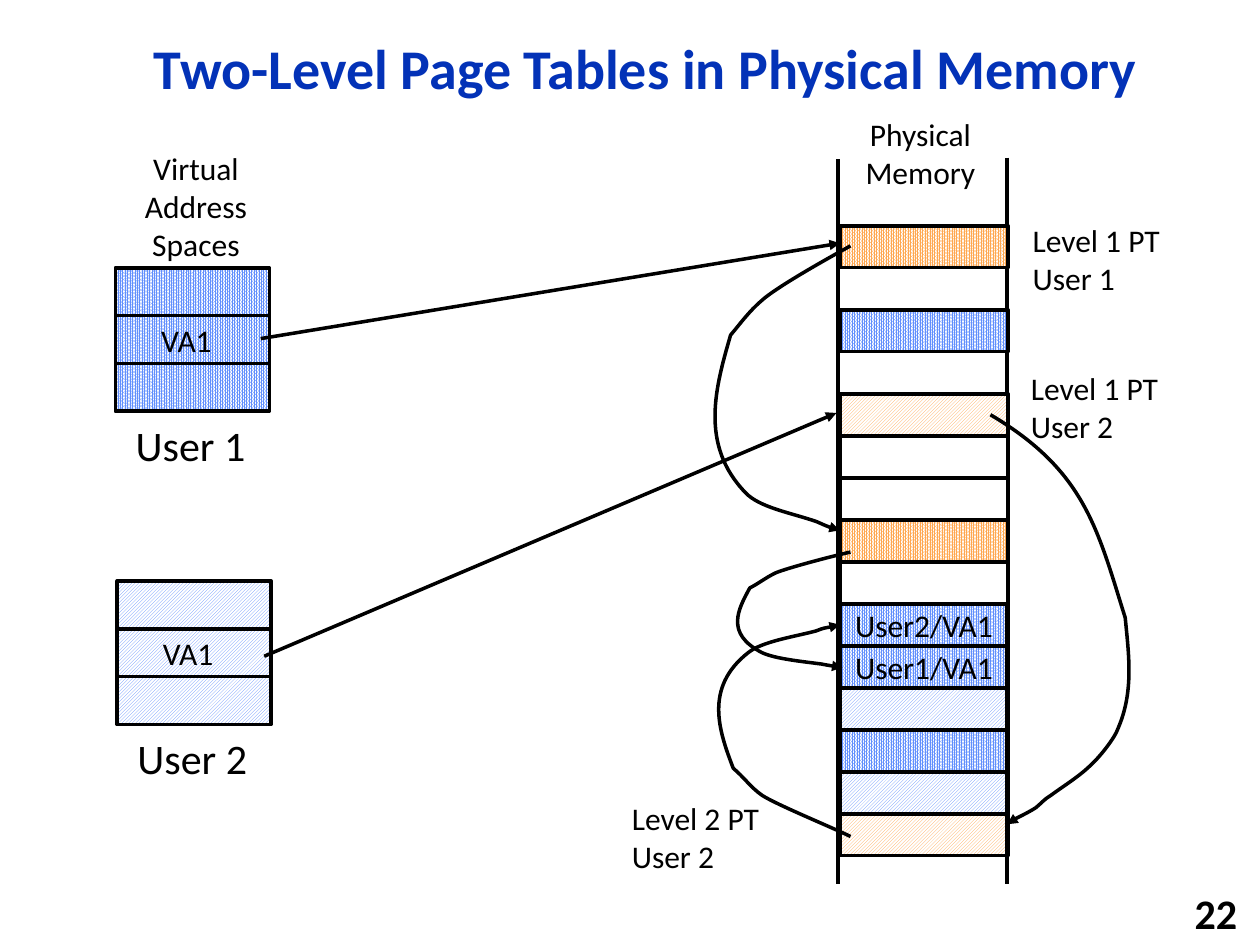
import pptx
import pptx.util
import pptx.dml.color
import pptx.enum.dml
import pptx.enum.shapes
import pptx.enum.text
import pptx.oxml
import pptx.oxml.ns
import pptx.oxml.xmlchemy

pt = pptx.util.Pt
qn = pptx.oxml.ns.qn
node = pptx.oxml.xmlchemy.OxmlElement
ALIGN = pptx.enum.text.PP_ALIGN
ANCHOR = pptx.enum.text.MSO_ANCHOR
SHAPE = pptx.enum.shapes.MSO_SHAPE
DOTS = pptx.enum.dml.MSO_PATTERN.PERCENT_90
STRIPES = pptx.enum.dml.MSO_PATTERN.DARK_UPWARD_DIAGONAL

THEME = dict(font="Calibri", title="0332B7", ink="000000", paper="FFFFFF",
             blue="618FFD", orange="FFA74F", big=32, mid=24, small=18, line=2)

# Content: (text, left, top, width, height)
TITLE = ("Two-Level Page Tables in Physical Memory", 66, 12, 606, 58)
NUMBER = ("22", 564, 510, 150, 23)
HEADS = [("Virtual Address Spaces", 66, 81, 92, 73),
         ("Physical Memory", 480, 62, 92, 51)]
NOTES = [("Level 1 PT User 1", 583, 123, 113, 51),
         ("Level 1 PT User 2", 582, 207.5, 113, 51),
         ("Level 2 PT User 2", 354, 453, 114, 51)]

# Address spaces: (name, left, top, pattern)
USERS = [("User 1", 66, 153, DOTS), ("User 2", 67, 332, STRIPES)]
SPACE_W, SPACE_H = 88, 82

# Memory frames from the top: (colour, pattern, text); None is a gap
USED, SHARED = ("blue", DOTS, ""), ("blue", STRIPES, "")
FIRST, SECOND = ("orange", DOTS, ""), ("orange", STRIPES, "")
EMPTY = ("paper", None, "")
FRAMES = [FIRST, None, USED, None, SECOND, EMPTY, EMPTY, FIRST, EMPTY,
          ("blue", DOTS, "User2/VA1"), ("blue", DOTS, "User1/VA1"),
          SHARED, USED, SHARED, SECOND]
MEM_X, MEM_Y, MEM_W, MEM_H = 480, 129, 96, 24
SPLIT = 9  # frames from here on lie under the right rail

LEFT_RAIL = (479, 91, 479, 505)
RIGHT_RAIL = (575.5, 90, 575.5, 505)
ARROWS = [(149, 193.5, 480, 139), (151, 375, 478, 236)]

# Bezier curves: a start, then two handles and an end per piece
CURVES = [
    [(566, 237), (620, 269), (627, 302), (643, 353),
     (645, 374), (648, 395), (639, 416), (637, 422), (628, 433), (623.5, 437),
     (617, 443.5), (608, 449), (600.5, 454.5), (597, 456.5), (595, 459),
     (592, 461.5), (588, 464), (584, 466), (580, 468),
     (578, 469.5), (575.5, 471), (575.5, 471)],
    [(486, 140.5), (476, 146), (443.5, 164), (435, 172),
     (428, 178), (423, 185), (417.5, 191.5), (409, 221), (399.5, 254),
     (426, 281.5), (434, 290), (452, 293), (466.5, 298),
     (470, 299.5), (473, 301), (476.5, 302), (478, 302.5), (480, 303), (480, 303)],
    [(486, 478), (476, 473), (444, 460), (435.5, 454.5),
     (429, 450), (425, 444), (419, 439), (411, 418), (402, 393),
     (427.5, 373), (435.5, 366.5), (453.5, 364), (466.5, 360.5),
     (470, 359), (473, 358.5), (476.5, 358), (478, 357.5), (480, 357), (480, 357)],
    [(486, 315.5), (477, 317.5), (450, 324.5), (443, 327.5),
     (437, 330.5), (433.5, 333.5), (428.5, 336), (422, 348), (414, 362),
     (435.5, 373), (443, 376.5), (458, 378), (469.5, 379.5),
     (472, 380), (475, 380.5), (478, 381), (479.5, 381.5), (481.5, 381.5),
     (481.5, 381.5)],
]


def tint(name):
    return pptx.dml.color.RGBColor.from_string(THEME[name])


def write(shape, text, size="small", align=ALIGN.LEFT, anchor=ANCHOR.TOP,
          wrap=True, bold=False, ink="ink"):
    frame = shape.text_frame
    frame.word_wrap, frame.vertical_anchor = wrap, anchor
    frame.text = text
    para = frame.paragraphs[0]
    para.alignment = align
    font = para.runs[0].font
    font.name, font.size, font.bold = THEME["font"], pt(THEME[size]), bold
    font.color.rgb = tint(ink)
    return para


def label(text, x, y, w, h, **style):
    box = shapes.add_textbox(pt(x), pt(y), pt(w), pt(h))
    return write(box, text, **style)


def outline(shape, arrow=False):
    shape.line.color.rgb = tint("ink")
    shape.line.width = pt(THEME["line"])
    if arrow:
        end = node("a:tailEnd")
        end.set("type", "triangle")
        shape.line._get_or_add_ln().append(end)


def block(x, y, w, h, hue, pattern):
    rect = shapes.add_shape(SHAPE.RECTANGLE, pt(x), pt(y), pt(w), pt(h))
    rect.shadow.inherit = False
    if pattern is None:
        rect.fill.solid()
        rect.fill.fore_color.rgb = tint(hue)
    else:
        rect.fill.patterned()
        rect.fill.pattern = pattern
        rect.fill.fore_color.rgb = tint(hue)
        rect.fill.back_color.rgb = tint("paper")
    outline(rect)
    return rect


def rule(x1, y1, x2, y2, arrow=False):
    line = shapes.add_connector(pptx.enum.shapes.MSO_CONNECTOR.STRAIGHT,
                                pt(x1), pt(y1), pt(x2), pt(y2))
    outline(line, arrow)
    line._element.spPr.append(node("a:effectLst"))


def curve(points):
    spots = [(pt(x), pt(y)) for x, y in points]
    pen = shapes.build_freeform(*spots[0])
    pen.add_line_segments(spots[1:], close=False)
    shape = pen.convert_to_shape()
    shape.shadow.inherit = False
    shape.fill.background()
    outline(shape, arrow=True)
    # Merge each three straight steps into one Bezier piece
    steps = list(shape._element.iter(qn("a:lnTo")))
    for i in range(0, len(steps), 3):
        piece = node("a:cubicBezTo")
        steps[i].addprevious(piece)
        for step in steps[i:i + 3]:
            piece.append(step[0])
            step.getparent().remove(step)


def stack(first, last):
    for i in range(first, last):
        if FRAMES[i] is None:
            continue
        hue, pattern, text = FRAMES[i]
        rect = block(MEM_X, MEM_Y + i * MEM_H, MEM_W, MEM_H, hue, pattern)
        if text:
            write(rect, text, align=ALIGN.CENTER, anchor=ANCHOR.MIDDLE, wrap=False)


deck = pptx.Presentation()
deck.slide_width, deck.slide_height = pt(720), pt(540)
shapes = deck.slides.add_slide(deck.slide_layouts[6]).shapes

# Title and slide number
head = label(*TITLE, size="big", align=ALIGN.CENTER, anchor=ANCHOR.MIDDLE,
             bold=True, ink="title")
head.line_spacing = 0.9
label(*NUMBER, size="mid", align=ALIGN.RIGHT, anchor=ANCHOR.MIDDLE, bold=True)

# Virtual address spaces
for name, x, y, pattern in USERS:
    block(x, y, SPACE_W, SPACE_H, "blue", pattern)
    for k in (1, 2):
        row = y + k * SPACE_H / 3
        rule(x, row, x + SPACE_W, row)
    label("VA1", x + 19, y + 27, 45, 29, wrap=False)
    label(name, x + 4.5, y + 83, 78, 36, size="mid", wrap=False)

# Physical memory
rule(*LEFT_RAIL)
stack(SPLIT, len(FRAMES))
rule(*RIGHT_RAIL)
stack(0, SPLIT)

# Labels
for item in HEADS:
    label(*item, align=ALIGN.CENTER, anchor=ANCHOR.MIDDLE)
for item in NOTES:
    label(*item)

# Pointers
for ends in ARROWS:
    rule(*ends, arrow=True)
for points in CURVES:
    curve(points)

deck.save("out.pptx")
